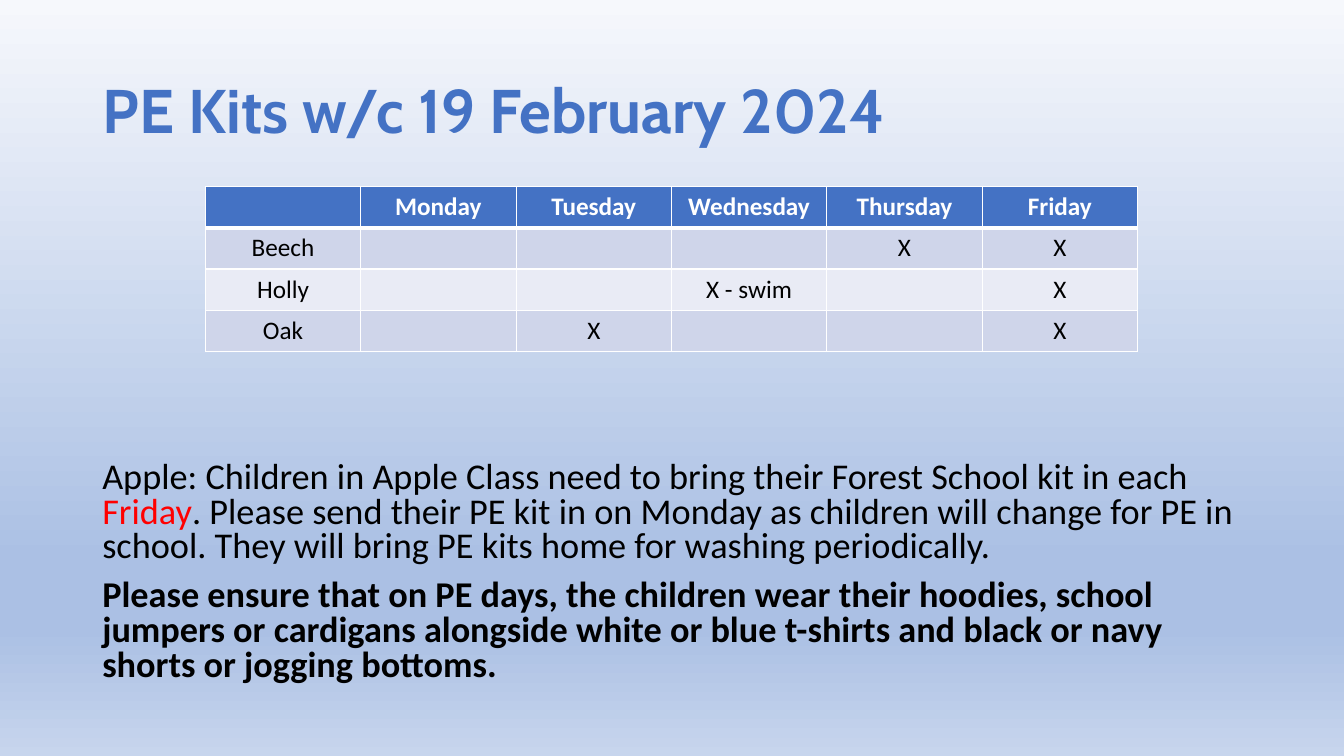
from lxml.etree import SubElement
from pptx import Presentation
from pptx.dml.color import RGBColor
from pptx.enum.text import MSO_ANCHOR, PP_ALIGN
from pptx.oxml.ns import qn
from pptx.util import Pt

BLUE, WHITE, BLACK, RED = "4472C4", "FFFFFF", "000000", "FF0000"
BANDS = ("CFD5EA", "E9EBF5")
BACKGROUND = ((0, "F6F8FC"), (74, "ABC0E4"), (83, "ABC0E4"), (100, "C7D5ED"))

KIT_DAYS = (
    ("", "Monday", "Tuesday", "Wednesday", "Thursday", "Friday"),
    ("Beech", "", "", "", "X", "X"),
    ("Holly", "", "", "X - swim", "", "X"),
    ("Oak", "", "X", "", "", "X"),
)
NOTICES = (
    (("Apple: Children in Apple Class need to bring their Forest School kit in each ", BLACK, False),
     ("Friday", RED, False),
     (". Please send their PE kit in on Monday as children will change for PE in school. "
      "They will bring PE kits home for washing periodically.", BLACK, False)),
    (("Please ensure that on PE days, the children wear their hoodies, school jumpers or "
      "cardigans alongside white or blue t-shirts and black or navy shorts or jogging bottoms.",
      BLACK, True),),
)


def rgb(color):
    return RGBColor.from_string(color)


def format_run(r, size, color, bold, font="Calibri"):
    r.font.name, r.font.size, r.font.bold = font, Pt(size), bold
    r.font.color.rgb = rgb(color)


def paint_background(s):
    fill = s.background.fill
    fill.gradient()
    fill.gradient_angle = 270  # counter-clockwise, so top to bottom
    stops = s.element.find(".//" + qn("a:gsLst"))
    for stop in list(stops):
        stops.remove(stop)
    for percent, color in BACKGROUND:
        stop = SubElement(stops, qn("a:gs"), pos=str(percent * 1000))
        SubElement(stop, qn("a:srgbClr"), val=color)


def add_title(s, text):
    title = s.shapes.title
    title.left, title.top, title.width, title.height = Pt(66), Pt(28.8), Pt(828), Pt(104.4)
    tf = title.text_frame
    tf.text = text
    tf.vertical_anchor = MSO_ANCHOR.MIDDLE
    p = tf.paragraphs[0]
    p.alignment, p.line_spacing = PP_ALIGN.LEFT, 0.9
    format_run(p.runs[0], 44, BLUE, True, "Cabin")


def set_borders(cell, top, bottom):
    """Draw white borders; top and bottom are widths in points."""
    tc_pr = cell._tc.get_or_add_tcPr()
    widths = (("L", 1), ("R", 1), ("T", top), ("B", bottom))
    for side, width in widths:
        ln = SubElement(tc_pr, qn(f"a:ln{side}"), w=str(Pt(width)))
        fill = SubElement(ln, qn("a:solidFill"))
        SubElement(fill, qn("a:srgbClr"), val=WHITE)


def add_kit_table(s):
    n_rows, n_cols = len(KIT_DAYS), len(KIT_DAYS[0])
    table = s.shapes.add_table(n_rows, n_cols, Pt(146.7), Pt(133.2), Pt(666), Pt(118)).table
    for i, values in enumerate(KIT_DAYS):
        header = i == 0
        for j, value in enumerate(values):
            cell = table.cell(i, j)
            set_borders(cell, 3 if i == 1 else 1, 3 if header else 1)
            cell.fill.solid()
            cell.fill.fore_color.rgb = rgb(BLUE if header else BANDS[(i - 1) % 2])
            cell.text_frame.text = value
            p = cell.text_frame.paragraphs[0]
            p.alignment = PP_ALIGN.CENTER
            p.font.size = Pt(18)
            for r in p.runs:
                format_run(r, 18, WHITE if header else BLACK, header)


def add_notices(s):
    tf = s.shapes.add_textbox(Pt(66), Pt(326), Pt(828), Pt(161)).text_frame
    tf.word_wrap = True
    for i, notice in enumerate(NOTICES):
        p = tf.add_paragraph() if i else tf.paragraphs[0]
        p.line_spacing, p.space_before = 0.8, Pt(10 if i else 0)
        for text, color, bold in notice:
            r = p.add_run()
            r.text = text
            format_run(r, 25.9, color, bold)


def main():
    prs = Presentation()
    prs.slide_width, prs.slide_height = Pt(960), Pt(540)
    s = prs.slides.add_slide(prs.slide_layouts[5])
    paint_background(s)
    add_title(s, "PE Kits w/c 19 February 2024")
    add_kit_table(s)
    add_notices(s)
    prs.save("out.pptx")


if __name__ == "__main__":
    main()
